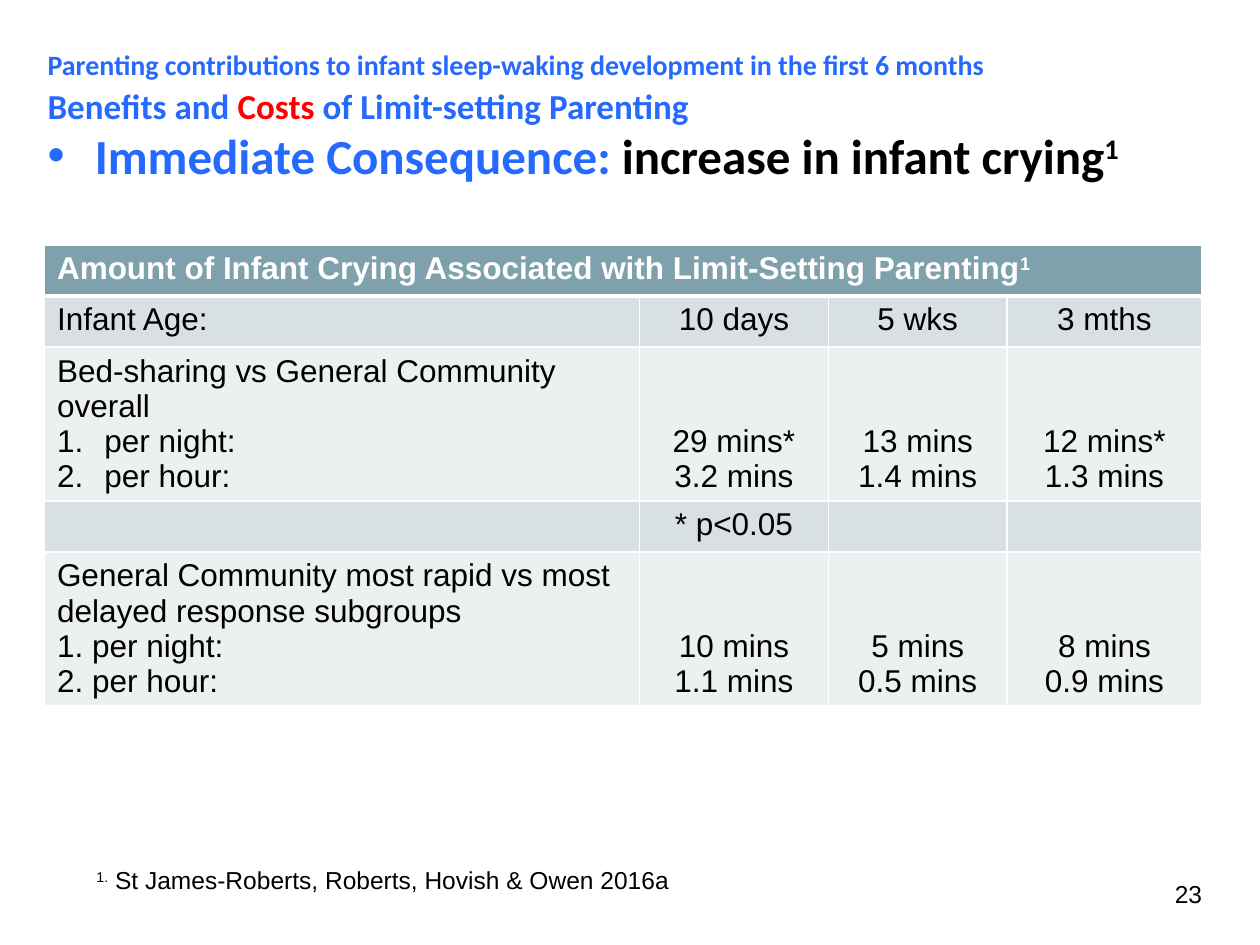
from pptx import Presentation
from pptx.dml.color import RGBColor
from pptx.enum.text import MSO_ANCHOR as ANCHOR, MSO_AUTO_SIZE as AUTO, PP_ALIGN as AL
from pptx.oxml.ns import qn
from pptx.util import Pt
from lxml.etree import SubElement

BLUE, RED, BLACK, WHITE = "2669FE", "FF0000", "000000", "FFFFFF"
HEADER, BAND_DARK, BAND_LIGHT = "7FA1AC", "D8E0E3", "ECF0F1"


def color(hex_code):
    return RGBColor.from_string(hex_code)


def set_marker(p, kind, indent=0, **attrs):
    """Give a paragraph a hanging indent and a bullet element (buNone, buChar, buAutoNum)."""
    pPr = p._p.get_or_add_pPr()
    pPr.set("marL", str(Pt(indent)))
    pPr.set("indent", str(-Pt(indent)))
    if kind != "buNone":
        SubElement(pPr, qn("a:buFont"), typeface="Arial")
    SubElement(pPr, qn("a:" + kind), **attrs)


class SlideBuilder:
    heading_font = "Calibri"
    text_font = "Arial"
    table_size = 18
    note_size = 14

    def __init__(self, slide):
        self.slide = slide

    def run(self, p, text, size, hex_code=BLACK, bold=False, font=None, superscript=False):
        r = p.add_run()
        r.text = text
        r.font.name = font or self.text_font
        r.font.size = Pt(size)
        r.font.bold = bold
        r.font.color.rgb = color(hex_code)
        if superscript:
            r._r.get_or_add_rPr().set("baseline", "30000")

    def body(self, left, top, width, height, lines):
        sp = self.slide.placeholders[1]
        sp.left, sp.top, sp.width, sp.height = map(Pt, (left, top, width, height))
        tf = sp.text_frame
        tf.auto_size = AUTO.NONE
        tf.vertical_anchor = ANCHOR.TOP
        for i, (size, spacing, bullet, runs) in enumerate(lines):
            p = tf.add_paragraph() if i else tf.paragraphs[0]
            if bullet:
                set_marker(p, "buChar", 27, char=bullet)
            else:
                set_marker(p, "buNone")
            p.line_spacing = spacing
            p.space_before = Pt(size * 0.2 if i else 0)
            for text, hex_code, superscript in runs:
                self.run(p, text, size, hex_code, True, self.heading_font, superscript)

    def text(self, left, top, width, height, runs, align=AL.LEFT):
        tf = self.slide.shapes.add_textbox(*map(Pt, (left, top, width, height))).text_frame
        tf.word_wrap = True
        p = tf.paragraphs[0]
        p.alignment = align
        for text, superscript in runs:
            self.run(p, text, self.note_size, superscript=superscript)

    def cell(self, cell, fill, bottom_line=1):
        tcPr = cell._tc.get_or_add_tcPr()
        for side, width in (("L", 1), ("R", 1), ("T", 1), ("B", bottom_line)):
            ln = SubElement(tcPr, qn("a:ln" + side), w=str(Pt(width)))
            SubElement(SubElement(ln, qn("a:solidFill")), qn("a:srgbClr"), val=WHITE)
        cell.fill.solid()
        cell.fill.fore_color.rgb = color(fill)

    def table(self, left, top, col_widths, row_heights, title, rows):
        frame = self.slide.shapes.add_table(
            len(row_heights), len(col_widths), Pt(left), Pt(top),
            Pt(sum(col_widths)), Pt(sum(row_heights)))
        table = frame.table
        for col, width in zip(table.columns, col_widths):
            col.width = Pt(width)
        for row, height in zip(table.rows, row_heights):
            row.height = Pt(height)

        for c in range(len(col_widths)):
            self.cell(table.cell(0, c), HEADER, 3)
        table.cell(0, 0).merge(table.cell(0, len(col_widths) - 1))
        p = table.cell(0, 0).text_frame.paragraphs[0]
        for text, superscript in title:
            self.run(p, text, self.table_size, WHITE, True, superscript=superscript)

        for r, (numbered, values) in enumerate(rows, 1):
            for c, lines in enumerate(values):
                cell = table.cell(r, c)
                self.cell(cell, BAND_DARK if r % 2 else BAND_LIGHT)
                if c and len(lines) > 1:
                    cell.vertical_anchor = ANCHOR.BOTTOM
                for i, line in enumerate(lines):
                    tf = cell.text_frame
                    p = tf.add_paragraph() if i else tf.paragraphs[0]
                    if numbered and c == 0 and i:
                        set_marker(p, "buAutoNum", 27, type="arabicPeriod")
                    p.alignment = AL.CENTER if c else AL.LEFT
                    self.run(p, line, self.table_size)


def main():
    prs = Presentation()
    prs.slide_width, prs.slide_height = Pt(720), Pt(540)
    s = prs.slides.add_slide(prs.slide_layouts[1])
    title = s.shapes.title._element
    title.getparent().remove(title)
    b = SlideBuilder(s)

    b.body(20, 26, 686, 514, [
        (16, 0.9, None, [
            ("Parenting contributions to infant sleep-waking development in the first 6 months",
             BLUE, False)]),
        (20, 0.9, None, [
            ("Benefits and ", BLUE, False), ("Costs", RED, False),
            (" of Limit-setting Parenting", BLUE, False)]),
        (28, 0.8, "•", [
            ("Immediate Consequence: ", BLUE, False),
            ("increase in infant crying", BLACK, False), ("1", BLACK, True)]),
    ])

    short, tall = 29.2, 87.6
    b.table(
        25.4, 140, [340, 108, 102, 111.5], [short, short, tall, short, tall],
        [("Amount of Infant Crying Associated with Limit-Setting Parenting", False),
         ("1", True)],
        [
            (False, [["Infant Age:"], ["10 days"], ["5 wks"], ["3 mths"]]),
            (True, [["Bed-sharing vs General Community overall", "per night:", "per hour:"],
                    ["29 mins*", "3.2 mins"], ["13 mins", "1.4 mins"],
                    ["12 mins*", "1.3 mins"]]),
            (False, [[], ["* p<0.05"], [], []]),
            (False, [["General Community most rapid vs most delayed response subgroups",
                      "1. per night:", "2. per hour:"],
                     ["10 mins", "1.1 mins"], ["5 mins", "0.5 mins"],
                     ["8 mins", "0.9 mins"]]),
        ])

    b.text(48, 491, 527, 24.5,
           [("1.", True), (" St James-Roberts, Roberts, Hovish & Owen 2016a", False)])
    b.text(615, 499, 79, 37.5, [("23", False)], AL.RIGHT)
    prs.save("out.pptx")


if __name__ == "__main__":
    main()
